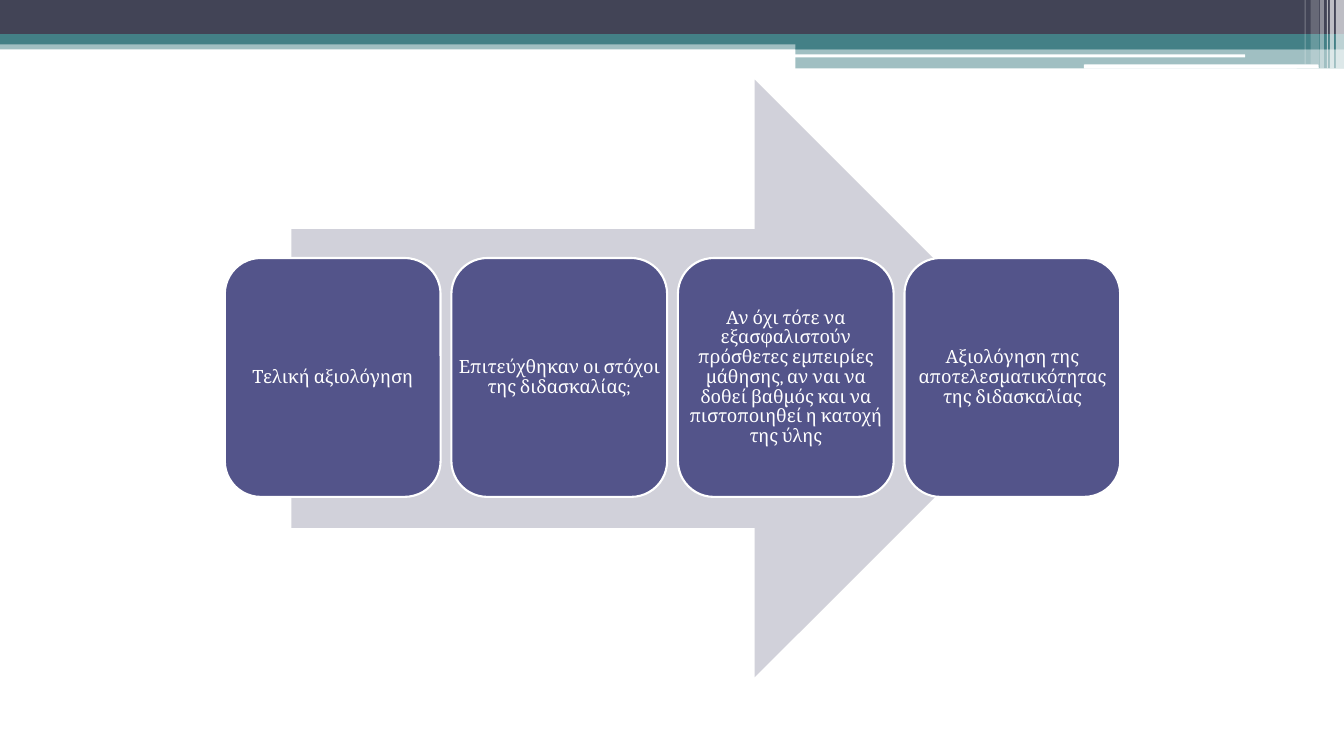
import pptx
import pptx.util
import pptx.dml.color
import pptx.enum.shapes
import pptx.enum.text
import pptx.oxml
import pptx.oxml.ns

Inches = pptx.util.Inches
Pt = pptx.util.Pt
SHAPES = pptx.enum.shapes.MSO_SHAPE

COLORS = {
    "slate": "424456",
    "teal": "438086",
    "white": "FFFFFF",
    "arrow": "D1D1DA",
    "step": "53548A",
}
FONT = "Cambria"
SLIDE_WIDTH, SLIDE_HEIGHT = 13.33, 7.5

BANDS = [
    (0, 0.4, 13.33, 0.09, "teal", 50),
    (0, 0, 13.33, 0.34, "slate", 100),
    (0, 0.34, 13.33, 0.1, "teal", 100),
    (7.89, 0.39, 5.44, 0.1, "teal", 100),
    (7.89, 0.48, 5.44, 0.2, "teal", 50),
]
HIGHLIGHTS = [(7.88, 0.54, 4.47, 0.03), (10.75, 0.64, 2.33, 0.04)]
STRIPES = [
    (13.25, 0.08, 0.68, 65),
    (13.19, 0.04, 0.68, 65),
    (13.16, 0.01, 0.68, 60),
    (13.09, 0.04, 0.68, 40),
    (13, 0.08, 0.64, 20),
    (12.94, 0.01, 0.64, 30),
]

STEPS = [
    "Τελική αξιολόγηση",
    "Επιτεύχθηκαν οι στόχοι της διδασκαλίας;",
    "Αν όχι τότε να εξασφαλιστούν πρόσθετες εμπειρίες μάθησης, αν ναι να "
    "δοθεί βαθμός και να πιστοποιηθεί η κατοχή της ύλης",
    "Αξιολόγηση της αποτελεσματικότητας της διδασκαλίας",
]
STEP_LEFT, STEP_TOP, STEP_WIDTH, STEP_HEIGHT = 2.23, 2.56, 2.14, 2.37
STEP_PITCH = 2.247


def rgb(color):
    return pptx.dml.color.RGBColor.from_string(COLORS[color])


def add_block(page, kind, left, top, width, height, color, opacity=100):
    block = page.shapes.add_shape(
        kind, Inches(left), Inches(top), Inches(width), Inches(height))
    block.shadow.inherit = False
    block.fill.solid()
    block.fill.fore_color.rgb = rgb(color)
    block.line.fill.background()
    if opacity < 100:
        tint = block.fill._xPr.find(".//" + pptx.oxml.ns.qn("a:srgbClr"))
        alpha = pptx.oxml.parse_xml(
            f'<a:alpha {pptx.oxml.ns.nsdecls("a")} val="{opacity * 1000}"/>')
        tint.append(alpha)
    return block


def add_label(page, left, top, width, height, text):
    box = page.shapes.add_textbox(
        Inches(left), Inches(top), Inches(width), Inches(height))
    frame = box.text_frame
    frame.word_wrap = True
    frame.vertical_anchor = pptx.enum.text.MSO_ANCHOR.MIDDLE
    frame.margin_left = frame.margin_right = Inches(0.05)
    frame.margin_top = frame.margin_bottom = Inches(0.05)
    para = frame.paragraphs[0]
    para.alignment = pptx.enum.text.PP_ALIGN.CENTER
    para.line_spacing = 0.9
    span = para.add_run()
    span.text = text
    span.font.name = FONT
    span.font.size = Pt(13)
    span.font.color.rgb = rgb("white")


def add_step(page, left, text):
    area = (left, STEP_TOP, STEP_WIDTH, STEP_HEIGHT)
    card = add_block(page, SHAPES.ROUNDED_RECTANGLE, *area, "step")
    card.line.color.rgb = rgb("white")
    card.line.width = Pt(1.5)
    add_label(page, *area, text)


def add_header(page):
    for band in BANDS:
        add_block(page, SHAPES.RECTANGLE, *band)
    for highlight in HIGHLIGHTS:
        add_block(page, SHAPES.ROUNDED_RECTANGLE, *highlight, "white")
    for left, width, height, opacity in STRIPES:
        add_block(page, SHAPES.RECTANGLE, left, 0, width, height, "white", opacity)


def main():
    deck = pptx.Presentation()
    deck.slide_width = Inches(SLIDE_WIDTH)
    deck.slide_height = Inches(SLIDE_HEIGHT)
    page = deck.slides.add_slide(deck.slide_layouts[6])
    add_header(page)
    add_block(page, SHAPES.RIGHT_ARROW, 2.89, 0.79, 7.56, 5.93, "arrow")
    for index, text in enumerate(STEPS):
        add_step(page, STEP_LEFT + index * STEP_PITCH, text)
    deck.save("out.pptx")


if __name__ == "__main__":
    main()
